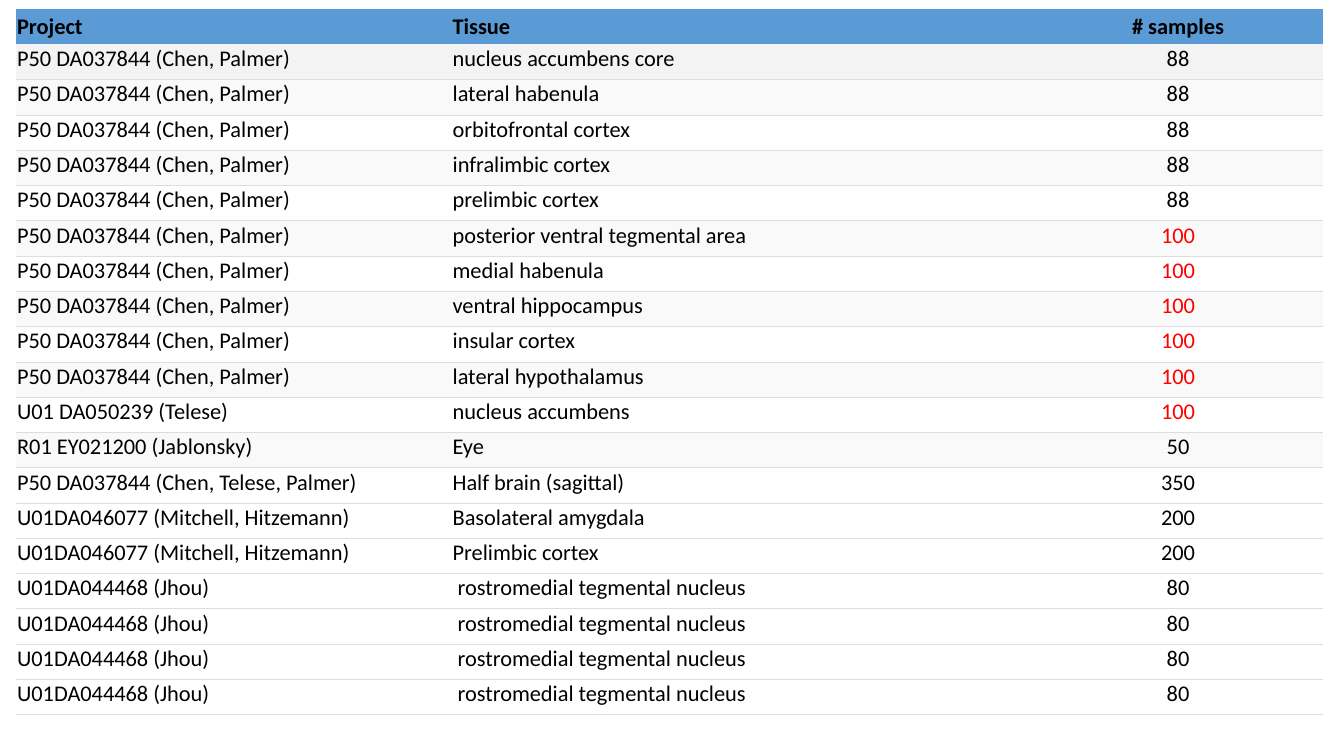
"""Build a slide with a table of sample counts by project and tissue."""
from lxml.etree import SubElement
from pptx import Presentation
from pptx.dml.color import RGBColor
from pptx.enum.text import MSO_ANCHOR, PP_ALIGN
from pptx.oxml.ns import qn
from pptx.util import Inches, Pt

HEADER_BLUE = RGBColor(0x5B, 0x9B, 0xD5)
FIRST_GRAY = RGBColor(0xF3, 0xF3, 0xF3)
BAND_GRAY = RGBColor(0xF9, 0xF9, 0xF9)
RULE_GRAY = RGBColor(0xDD, 0xDD, 0xDD)
WHITE = RGBColor(0xFF, 0xFF, 0xFF)
BLACK = RGBColor(0x00, 0x00, 0x00)
RED = RGBColor(0xFF, 0x00, 0x00)

ROW_HEIGHT = Inches(0.35)
COLUMN_WIDTHS = [Inches(4.32), Inches(5.77), Inches(2.87)]
CELL_MARGIN = Inches(0.01)
LAST_BANDED_ROW = 12

CHEN_PALMER = "P50 DA037844 (Chen, Palmer)"
MITCHELL = "U01DA046077 (Mitchell, Hitzemann)"
JHOU = "U01DA044468 (Jhou)"
ROSTROMEDIAL = (JHOU, " rostromedial tegmental nucleus", "80")

samples = [
    ("Project", "Tissue", "# samples"),
    (CHEN_PALMER, "nucleus accumbens core", "88"),
    (CHEN_PALMER, "lateral habenula", "88"),
    (CHEN_PALMER, "orbitofrontal cortex", "88"),
    (CHEN_PALMER, "infralimbic cortex", "88"),
    (CHEN_PALMER, "prelimbic cortex", "88"),
    (CHEN_PALMER, "posterior ventral tegmental area", "100"),
    (CHEN_PALMER, "medial habenula", "100"),
    (CHEN_PALMER, "ventral hippocampus", "100"),
    (CHEN_PALMER, "insular cortex", "100"),
    (CHEN_PALMER, "lateral hypothalamus", "100"),
    ("U01 DA050239 (Telese)", "nucleus accumbens", "100"),
    ("R01 EY021200 (Jablonsky)", "Eye", "50"),
    ("P50 DA037844 (Chen, Telese, Palmer)", "Half brain (sagittal)", "350"),
    (MITCHELL, "Basolateral amygdala", "200"),
    (MITCHELL, "Prelimbic cortex", "200"),
] + [ROSTROMEDIAL] * 4


def set_borders(cell, ruled_sides):
    """Rule the given sides in gray and clear the others."""
    properties = cell._tc.get_or_add_tcPr()
    for side in ("L", "R", "T", "B"):
        border = SubElement(properties, qn(f"a:ln{side}"), w=str(Pt(0.6)))
        if side in ruled_sides:
            paint = SubElement(border, qn("a:solidFill"))
            SubElement(paint, qn("a:srgbClr"), val=str(RULE_GRAY))
        else:
            SubElement(border, qn("a:noFill"))


presentation = Presentation()
presentation.slide_width = Inches(13.33)
presentation.slide_height = Inches(7.5)
slide = presentation.slides.add_slide(presentation.slide_layouts[6])

sample_table = slide.shapes.add_table(
    len(samples), len(COLUMN_WIDTHS), Inches(0.16), Inches(0.09),
    sum(COLUMN_WIDTHS), ROW_HEIGHT * len(samples)).table
sample_table.horz_banding = False
for column, width in zip(sample_table.columns, COLUMN_WIDTHS):
    column.width = width

for row_index, entries in enumerate(samples):
    sample_table.rows[row_index].height = ROW_HEIGHT
    is_header = row_index == 0
    if is_header:
        background, ruled_sides = HEADER_BLUE, ""
    elif row_index == 1:
        background, ruled_sides = FIRST_GRAY, "B"
    else:
        banded = row_index % 2 == 0 and row_index <= LAST_BANDED_ROW
        background, ruled_sides = BAND_GRAY if banded else WHITE, "TB"

    for column_index, entry in enumerate(entries):
        cell = sample_table.cell(row_index, column_index)
        set_borders(cell, ruled_sides)
        cell.fill.solid()
        cell.fill.fore_color.rgb = background
        cell.margin_left = cell.margin_right = CELL_MARGIN
        cell.margin_top = cell.margin_bottom = CELL_MARGIN
        cell.vertical_anchor = MSO_ANCHOR.MIDDLE if is_header else MSO_ANCHOR.TOP
        paragraph = cell.text_frame.paragraphs[0]
        paragraph.alignment = PP_ALIGN.CENTER if column_index == 2 else PP_ALIGN.LEFT
        run = paragraph.add_run()
        run.text = entry
        run.font.name = "Calibri"
        run.font.size = Pt(16)
        run.font.bold = is_header
        run.font.color.rgb = RED if entry == "100" else BLACK

presentation.save("out.pptx")
